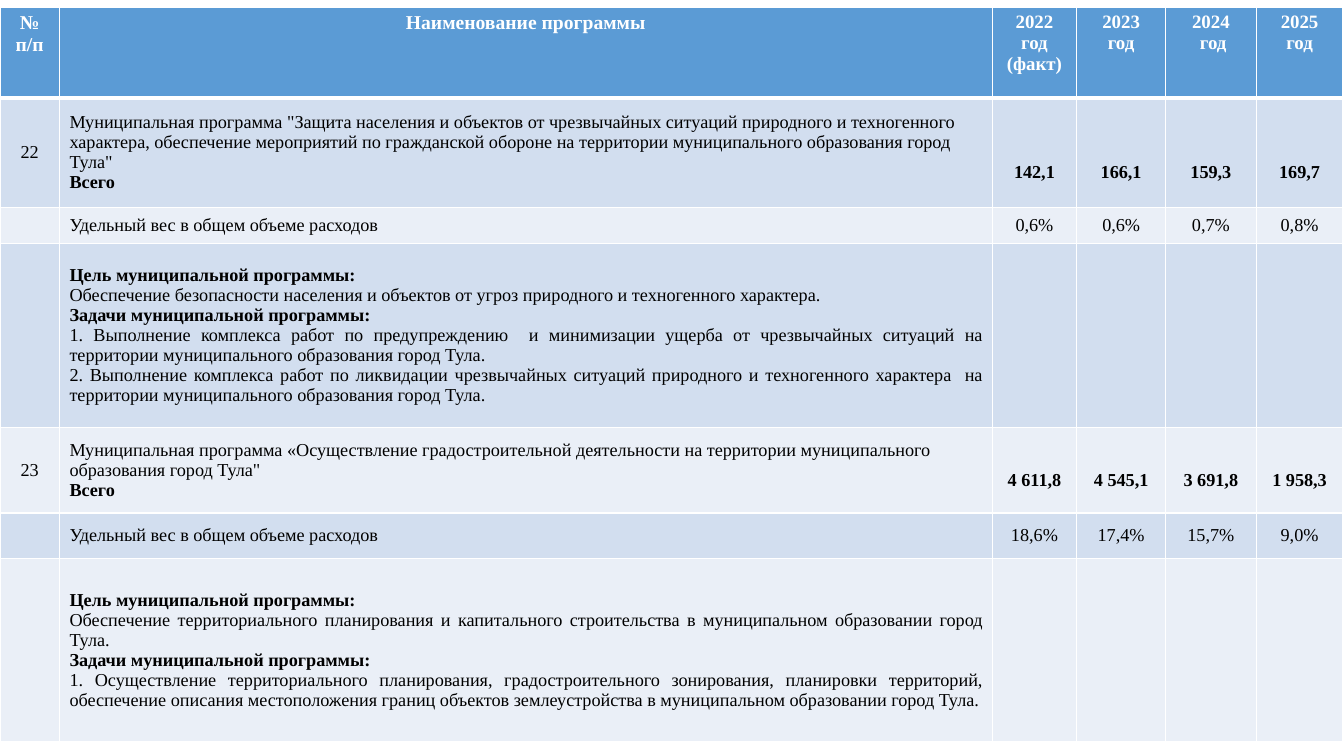
from lxml import etree
from pptx import Presentation
from pptx import util as u
from pptx.dml.color import RGBColor
from pptx.enum import text
from pptx.oxml.ns import qn

FONT = "Times New Roman"
WHITE, BLACK, HEADER_BLUE = "FFFFFF", "000000", "5B9BD5"
BANDS = ["D2DEEF", "EAEFF7"]
LEFT, CENTER, JUSTIFY = text.PP_ALIGN.LEFT, text.PP_ALIGN.CENTER, text.PP_ALIGN.JUSTIFY

COLUMN_WIDTHS = [0.59, 9.25, 0.84, 0.88, 0.9, 0.86]
ROW_HEIGHTS = [0.9, 1.09, 0.36, 1.82, 0.85, 0.45, 1.82]
LINE = 0.2

HEADINGS = [["№ п/п"], ["Наименование программы"], ["2022 год (факт)"],
            ["2023 год"], ["2024", " год"], ["2025", "год"]]
HEADING_SIZES = [14, 14, 13.5, 13.5, 13.5, 13.5]

TOTAL = "Всего"
SHARE = "Удельный вес в общем объеме расходов"
GOAL = "Цель муниципальной программы:"
TASKS = "Задачи муниципальной программы:"
BOLD_LINES = {TOTAL, GOAL, TASKS}

PROGRAMMES = [
    {
        "number": "22",
        "name": "Муниципальная программа \"Защита населения и объектов от чрезвычайных "
                "ситуаций природного и техногенного характера, обеспечение мероприятий по "
                "гражданской обороне на территории муниципального образования город Тула\"",
        "totals": ["142,1", "166,1", "159,3", "169,7"],
        "totals_drop": 2 * LINE,
        "shares": ["0,6%", "0,6%", "0,7%", "0,8%"],
        "goal": "Обеспечение безопасности населения и объектов от угроз природного и "
                "техногенного характера.",
        "tasks": [
            "1. Выполнение комплекса работ по предупреждению  и минимизации ущерба от "
            "чрезвычайных ситуаций на территории муниципального образования город Тула.",
            "2. Выполнение комплекса работ по ликвидации чрезвычайных ситуаций природного и "
            "техногенного характера  на территории муниципального образования город Тула.",
        ],
    },
    {
        "number": "23",
        "name": "Муниципальная программа «Осуществление градостроительной деятельности на "
                "территории муниципального образования город Тула\"",
        "totals": ["4 611,8", "4 545,1", "3 691,8", "1 958,3"],
        "totals_drop": LINE,
        "shares": ["18,6%", "17,4%", "15,7%", "9,0%"],
        "goal": "Обеспечение территориального планирования и капитального строительства в "
                "муниципальном образовании город Тула.",
        "tasks": [
            "1. Осуществление территориального планирования, градостроительного зонирования, "
            "планировки территорий, обеспечение описания местоположения границ объектов "
            "землеустройства в муниципальном образовании город Тула.",
        ],
    },
]


def rgb(value):
    return RGBColor.from_string(value)


def set_borders(cell, top=1, bottom=1):
    widths = {"a:lnL": 1, "a:lnR": 1, "a:lnT": top, "a:lnB": bottom}
    properties = cell._tc.get_or_add_tcPr()
    for position, (tag, width) in enumerate(widths.items()):
        line = etree.Element(qn(tag), w=str(u.Pt(width)))
        fill = etree.SubElement(line, qn("a:solidFill"))
        etree.SubElement(fill, qn("a:srgbClr"), val=WHITE)
        properties.insert(position, line)


def write_cell(cell, lines, align=CENTER, size=13, color=BLACK, bold=False):
    """Write one paragraph per line; subheadings are always bold."""
    for index, line in enumerate(lines):
        frame = cell.text_frame
        paragraph = frame.add_paragraph() if index else frame.paragraphs[0]
        paragraph.alignment = align
        run = paragraph.add_run()
        run.text = line
        run.font.name = FONT
        run.font.size = u.Pt(size)
        run.font.bold = bold or line in BOLD_LINES
        run.font.color.rgb = rgb(color)
    if not lines:
        cell.margin_top = cell.margin_bottom = 0


def fill_header(cells):
    for cell, lines, size in zip(cells, HEADINGS, HEADING_SIZES):
        cell.fill.solid()
        cell.fill.fore_color.rgb = rgb(HEADER_BLUE)
        set_borders(cell, bottom=3)
        write_cell(cell, lines, size=size, color=WHITE, bold=True)


def fill_row(cells, band, number, description, align, values, bold=False, drop=0, top=1):
    """Fill a body row; drop lowers the yearly values within their cells."""
    for cell in cells:
        cell.fill.solid()
        cell.fill.fore_color.rgb = rgb(band)
        cell.vertical_anchor = text.MSO_ANCHOR.MIDDLE
        set_borders(cell, top=top)
    number_cell, description_cell, *year_cells = cells
    write_cell(number_cell, number)
    write_cell(description_cell, description, align)
    for cell, value in zip(year_cells, values):
        if drop:
            cell.margin_top = u.Inches(0.05 + drop)
        write_cell(cell, value, bold=bold)


def programme_rows(programme):
    totals = [[value] for value in programme["totals"]]
    shares = [[value] for value in programme["shares"]]
    return [
        dict(number=[programme["number"]], description=[programme["name"], TOTAL],
             align=LEFT, values=totals, bold=True, drop=programme["totals_drop"]),
        dict(number=[], description=[SHARE], align=JUSTIFY, values=shares),
        dict(number=[], description=[GOAL, programme["goal"], TASKS, *programme["tasks"]],
             align=JUSTIFY, values=[[]] * len(shares)),
    ]


def add_programme_table(slide, left, top, width, height):
    table = slide.shapes.add_table(
        len(ROW_HEIGHTS), len(COLUMN_WIDTHS),
        u.Inches(left), u.Inches(top), u.Inches(width), u.Inches(height)).table
    table.first_row = table.horz_banding = False
    for column, column_width in zip(table.columns, COLUMN_WIDTHS):
        column.width = u.Inches(column_width)
    for row, row_height in zip(table.rows, ROW_HEIGHTS):
        row.height = u.Inches(row_height)

    header, *body = [list(row.cells) for row in table.rows]
    fill_header(header)
    contents = [row for programme in PROGRAMMES for row in programme_rows(programme)]
    for index, (cells, content) in enumerate(zip(body, contents)):
        fill_row(cells, BANDS[index % 2], top=1 if index else 3, **content)


def main():
    deck = Presentation()
    deck.slide_width, deck.slide_height = u.Inches(13.33), u.Inches(7.5)
    slide = deck.slides.add_slide(deck.slide_layouts[6])
    add_programme_table(slide, 0, 0.07, sum(COLUMN_WIDTHS), sum(ROW_HEIGHTS))
    deck.save("out.pptx")


if __name__ == "__main__":
    main()
